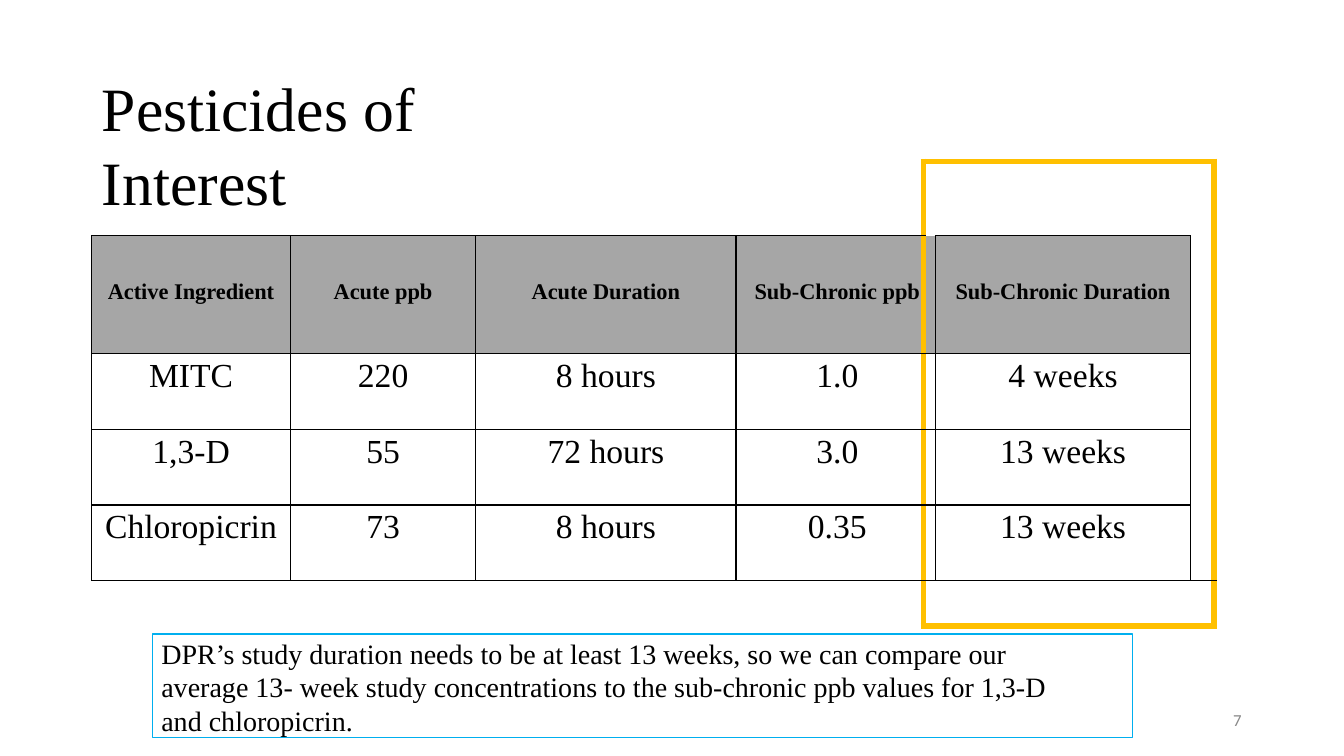
import pptx
import pptx.util
import pptx.dml.color
import pptx.enum.shapes
import pptx.enum.text
import pptx.oxml.ns
import lxml.etree

Inches, Pt = pptx.util.Inches, pptx.util.Pt
RGBColor = pptx.dml.color.RGBColor
Align = pptx.enum.text.PP_ALIGN

BLACK = RGBColor(0x00, 0x00, 0x00)
GOLD = RGBColor(0xFF, 0xC0, 0x00)
HEADER_GRAY = RGBColor(0xA6, 0xA6, 0xA6)
NUMBER_GRAY = RGBColor(0x88, 0x88, 0x88)
BLUE = RGBColor(0x00, 0xAF, 0xEF)

TITLE = "Pesticides of Interest"
HEADERS = ["Active Ingredient", "Acute ppb", "Acute Duration",
           "Sub-Chronic ppb", "Sub-Chronic Duration"]
PESTICIDES = [
    ["MITC", "220", "8 hours", "1.0", "4 weeks"],
    ["1,3-D", "55", "72 hours", "3.0", "13 weeks"],
    ["Chloropicrin", "73", "8 hours", "0.35", "13 weeks"],
]
NOTE = ("DPR’s study duration needs to be at least 13 weeks, so we can compare our "
        "average 13- week study concentrations to the sub-chronic ppb values for 1,3-D "
        "and chloropicrin.")
PAGE_NUMBER = "7"

# The grid has a narrow strip on each side of the highlighted duration column.
COLUMN_WIDTHS = [1.97, 1.84, 2.58, 1.86, 0.12, 2.53, 0.23]
ROW_HEIGHTS = [0.74, 1.17, 0.75, 0.75, 0.75, 0.45]
TEXT_COLUMNS = [0, 1, 2, 3, 5]
PPB_COLUMN, LEFT_STRIP, RIGHT_STRIP = 3, 4, 6
HEADER_ROW, LAST_ROW = 1, 5
MERGES = [((0, 0), (0, 3)), ((0, 4), (0, 6)), ((1, 6), (4, 6)),
          ((5, 0), (5, 3)), ((5, 4), (5, 6))]


def write(frame, text, size, font="Times New Roman", color=BLACK, bold=False,
          align=Align.LEFT, spacing=None, margins=(0, 0, 0, 0)):
    """Fill a text frame or cell; margins are left, top, right, bottom in inches."""
    (frame.margin_left, frame.margin_top,
     frame.margin_right, frame.margin_bottom) = map(Inches, margins)
    text_frame = getattr(frame, "text_frame", frame)
    text_frame.word_wrap = True
    paragraph = text_frame.paragraphs[0]
    paragraph.alignment = align
    if spacing:
        paragraph.line_spacing = Pt(spacing)
    run = paragraph.add_run()
    run.text = text
    run.font.size, run.font.name, run.font.bold = Pt(size), font, bold
    run.font.color.rgb = color


def add_text_box(slide, left, top, width, height, text, size, **text_format):
    box = slide.shapes.add_textbox(*map(Inches, (left, top, width, height)))
    write(box.text_frame, text, size, **text_format)


def vertical_rule(line, row):
    """Colour of the grid line left of column number `line`, or None."""
    if line in (LEFT_STRIP, len(COLUMN_WIDTHS)):
        return GOLD
    return BLACK if HEADER_ROW <= row < LAST_ROW else None


def horizontal_rule(line, column):
    """Colour of the grid line above row number `line`, or None."""
    if line in (0, len(ROW_HEIGHTS)):
        return GOLD if column >= LEFT_STRIP else None
    if line == LAST_ROW:
        return BLACK
    if line == HEADER_ROW:
        return None if column in (LEFT_STRIP, RIGHT_STRIP) else BLACK
    return BLACK if column < RIGHT_STRIP else None


def set_border(cell, side, color):
    qn = pptx.oxml.ns.qn
    properties = cell._tc.get_or_add_tcPr()
    width = Pt(4.5 if color == GOLD else 1)
    border = lxml.etree.SubElement(properties, qn("a:ln" + side), w=str(width))
    if color is None:
        lxml.etree.SubElement(border, qn("a:noFill"))
    else:
        fill = lxml.etree.SubElement(border, qn("a:solidFill"))
        lxml.etree.SubElement(fill, qn("a:srgbClr"), val=str(color))


def format_cell(cell, row, column):
    bottom, right = row + cell.span_height, column + cell.span_width
    set_border(cell, "L", vertical_rule(column, row))
    set_border(cell, "R", vertical_rule(right, row))
    set_border(cell, "T", horizontal_rule(row, column))
    set_border(cell, "B", horizontal_rule(bottom, column))
    if row == HEADER_ROW and column < RIGHT_STRIP:
        cell.fill.solid()
        cell.fill.fore_color.rgb = HEADER_GRAY
    else:
        cell.fill.background()
    cell.margin_left = cell.margin_right = cell.margin_top = cell.margin_bottom = 0


def add_pesticide_table(slide):
    frame = slide.shapes.add_table(
        len(ROW_HEIGHTS), len(COLUMN_WIDTHS), Inches(0.91), Inches(1.6),
        Inches(sum(COLUMN_WIDTHS)), Inches(sum(ROW_HEIGHTS)))
    table = frame.table
    table.first_row = table.horz_banding = False
    for column, width in zip(table.columns, COLUMN_WIDTHS):
        column.width = Inches(width)
    for row, height in zip(table.rows, ROW_HEIGHTS):
        row.height = Inches(height)
    for start, end in MERGES:
        table.cell(*start).merge(table.cell(*end))
    for row in range(len(ROW_HEIGHTS)):
        for column in range(len(COLUMN_WIDTHS)):
            format_cell(table.cell(row, column), row, column)
    for row, texts in enumerate([HEADERS] + PESTICIDES, HEADER_ROW):
        is_header = row == HEADER_ROW
        for column, text in zip(TEXT_COLUMNS, texts):
            indent = 0.15 if column == PPB_COLUMN else 0
            write(table.cell(row, column), text, 16 if is_header else 24,
                  bold=is_header, align=Align.CENTER,
                  margins=(indent, 0.43 if is_header else 0.04, 0, 0))


def add_note(slide):
    note = slide.shapes.add_shape(
        pptx.enum.shapes.MSO_SHAPE.RECTANGLE,
        *map(Inches, (1.51, 6.29, 9.72, 1.03)))
    note.shadow.inherit = False
    note.fill.background()
    note.line.color.rgb = BLUE
    note.line.width = Pt(0.75)
    note.text_frame.vertical_anchor = pptx.enum.text.MSO_ANCHOR.TOP
    write(note.text_frame, NOTE, 20, spacing=24, margins=(0.09, 0.02, 0.66, 0))


def main():
    presentation = pptx.Presentation()
    presentation.slide_width, presentation.slide_height = Inches(13.33), Inches(7.5)
    slide = presentation.slides.add_slide(presentation.slide_layouts[6])
    add_text_box(slide, 12.2, 7.07, 0.14, 0.19, PAGE_NUMBER, 12, font="Calibri",
                 color=NUMBER_GRAY, spacing=12.4, margins=(0.03, 0, 0, 0))
    add_text_box(slide, 1, 0.67, 5.05, 0.79, TITLE, 44, spacing=53,
                 margins=(0.01, 0.02, 0.5, 0))
    add_pesticide_table(slide)
    add_note(slide)
    presentation.save("out.pptx")


if __name__ == "__main__":
    main()
